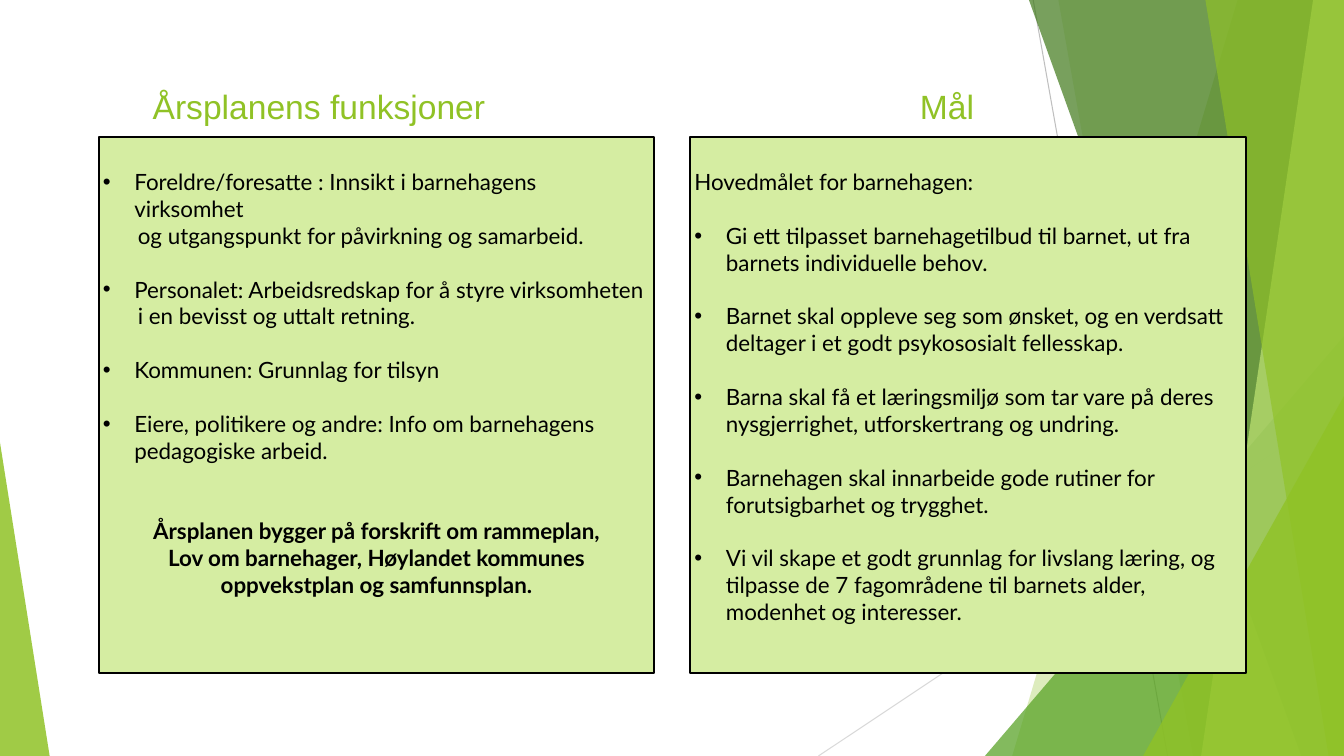
from lxml import etree
from pptx import Presentation
from pptx.dml.color import RGBColor
from pptx.enum.shapes import MSO_CONNECTOR, MSO_SHAPE
from pptx.enum.text import MSO_ANCHOR, PP_ALIGN
from pptx.oxml.ns import qn
from pptx.util import Pt

STRAIGHT = MSO_CONNECTOR.STRAIGHT
RECT, TRIANGLE = MSO_SHAPE.RECTANGLE, MSO_SHAPE.ISOSCELES_TRIANGLE
TOP = MSO_ANCHOR.TOP
LEFT, CENTER = PP_ALIGN.LEFT, PP_ALIGN.CENTER

WIDTH, HEIGHT = 960, 540
LINE = 19.2  # one line of body text
COLORS = {
    "lime": "90C226", "green": "54A021", "forest": "3F7819", "pale": "C0E474",
    "panel": "D5EDA2", "black": "000000", "grey": "BFBFBF", "light grey": "D9D9D9",
}


def rgb(name):
    return RGBColor.from_string(COLORS[name])


def write(p, text, font="Lato", size=16, color="black", bold=False,
          align=LEFT, indent=0, bullet=False, before=0):
    """Fill paragraph p with text in the given format."""
    p.alignment = align
    p.space_before = Pt(before)
    pPr = p._p.get_or_add_pPr()
    pPr.set("marL", str(Pt(indent)))
    pPr.set("indent", str(-Pt(indent) if bullet else 0))
    if bullet:
        etree.SubElement(pPr, qn("a:buFont")).set("typeface", "Arial")
        etree.SubElement(pPr, qn("a:buChar")).set("char", "•")
    else:
        etree.SubElement(pPr, qn("a:buNone"))
    r = p.add_run()
    r.text = text
    r.font.name, r.font.size, r.font.bold = font, Pt(size), bold
    r.font.color.rgb = rgb(color)


class Deck:
    def __init__(self):
        self.prs = Presentation()
        self.prs.slide_width, self.prs.slide_height = Pt(WIDTH), Pt(HEIGHT)
        self.s = self.prs.slides.add_slide(self.prs.slide_layouts[6])

    def paint(self, sp, color, opacity=100):
        sp.shadow.inherit = False
        sp.line.fill.background()
        sp.fill.solid()
        sp.fill.fore_color.rgb = rgb(color)
        if opacity < 100:
            clr = sp.fill._xPr.find(".//" + qn("a:srgbClr"))
            etree.SubElement(clr, qn("a:alpha")).set("val", str(opacity * 1000))

    def line(self, x1, y1, x2, y2, color):
        sp = self.s.shapes.add_connector(STRAIGHT, Pt(x1), Pt(y1), Pt(x2), Pt(y2))
        sp.line.color.rgb = rgb(color)
        sp.line.width = Pt(0.75)
        etree.SubElement(sp._element.spPr, qn("a:effectLst"))

    def ribbon(self, top, bottom, color, opacity):
        """Full-height band from a slanted left edge to the slide's right edge."""
        fb = self.s.shapes.build_freeform(Pt(top), 0)
        corners = [(WIDTH, 0), (WIDTH, HEIGHT), (bottom, HEIGHT)]
        fb.add_line_segments([(Pt(x), Pt(y)) for x, y in corners], close=True)
        self.paint(fb.convert_to_shape(), color, opacity)

    def triangle(self, x, y, w, apex, color, opacity):
        """Triangle standing on the slide's bottom edge."""
        sp = self.s.shapes.add_shape(TRIANGLE, Pt(x), Pt(y), Pt(w), Pt(HEIGHT - y))
        sp.adjustments[0] = apex
        self.paint(sp, color, opacity)

    def panel(self, x, paragraphs):
        sp = self.s.shapes.add_shape(RECT, Pt(x), Pt(98), Pt(397), Pt(383))
        self.paint(sp, "panel")
        sp.line.color.rgb = rgb("black")
        sp.line.width = Pt(1.5)
        tf = sp.text_frame
        tf.word_wrap, tf.vertical_anchor = True, TOP
        tf.margin_left = tf.margin_right = tf.margin_bottom = Pt(3)
        tf.margin_top = Pt(3 + LINE)
        for i, (text, fmt) in enumerate(paragraphs):
            p = tf.add_paragraph() if i else tf.paragraphs[0]
            write(p, text, **fmt)

    def heading(self, x, w, text):
        tf = self.s.shapes.add_textbox(Pt(x), Pt(58), Pt(w), Pt(36)).text_frame
        tf.word_wrap = True
        write(tf.paragraphs[0], text, font="Arial", size=24, color="lime")


PLAIN = {}
FIRST = {"indent": 22.5, "bullet": True}
BULLET = {**FIRST, "before": LINE}
CONTINUED = {"indent": 25}
BOLD = {"bold": True, "align": CENTER}

FUNCTIONS = [
    ("Foreldre/foresatte : Innsikt i barnehagens virksomhet", FIRST),
    ("og utgangspunkt for påvirkning og samarbeid.", CONTINUED),
    ("Personalet: Arbeidsredskap for å styre virksomheten", BULLET),
    ("i en bevisst og uttalt retning.", CONTINUED),
    ("Kommunen: Grunnlag for tilsyn", BULLET),
    ("Eiere, politikere og andre: Info om barnehagens pedagogiske arbeid.", BULLET),
    ("Årsplanen bygger på forskrift om rammeplan,", {**BOLD, "before": 2 * LINE}),
    ("Lov om barnehager, Høylandet kommunes oppvekstplan og samfunnsplan.", BOLD),
]
GOALS = [
    ("Hovedmålet for barnehagen:", PLAIN),
    ("Gi ett tilpasset barnehagetilbud til barnet, ut fra barnets individuelle "
     "behov.", BULLET),
    ("Barnet skal oppleve seg som ønsket, og en verdsatt deltager i et godt "
     "psykososialt fellesskap.", BULLET),
    ("Barna skal få et læringsmiljø som tar vare på deres nysgjerrighet, "
     "utforskertrang og undring.", BULLET),
    ("Barnehagen skal innarbeide gode rutiner for forutsigbarhet og trygghet.",
     BULLET),
    ("Vi vil skape et godt grunnlag for livslang læring, og tilpasse de 7 "
     "fagområdene til barnets alder, modenhet og interesser.", BULLET),
]


def main():
    deck = Deck()

    # Background facets, back to front
    deck.line(738, 0, 834, HEIGHT, "grey")
    deck.line(WIDTH, 290, 584.6, HEIGHT, "light grey")
    deck.ribbon(884, 723, "lime", 30)
    deck.ribbon(756, 852, "lime", 20)
    deck.triangle(703.5, 240, 256.5, 1, "green", 72)
    deck.ribbon(735, 929.5, "forest", 70)
    deck.ribbon(938, 858, "pale", 70)
    deck.ribbon(861, 949, "lime", 65)
    deck.triangle(816.5, 283, 143.5, 1, "lime", 80)
    deck.triangle(0, 316, 35.5, 0, "lime", 85)

    # Text panels
    deck.panel(70.5, FUNCTIONS)
    deck.panel(493, GOALS)

    # Headings
    deck.heading(102, 333, "Årsplanens funksjoner")
    deck.heading(650, 70, "Mål")

    deck.prs.save("out.pptx")


if __name__ == "__main__":
    main()
